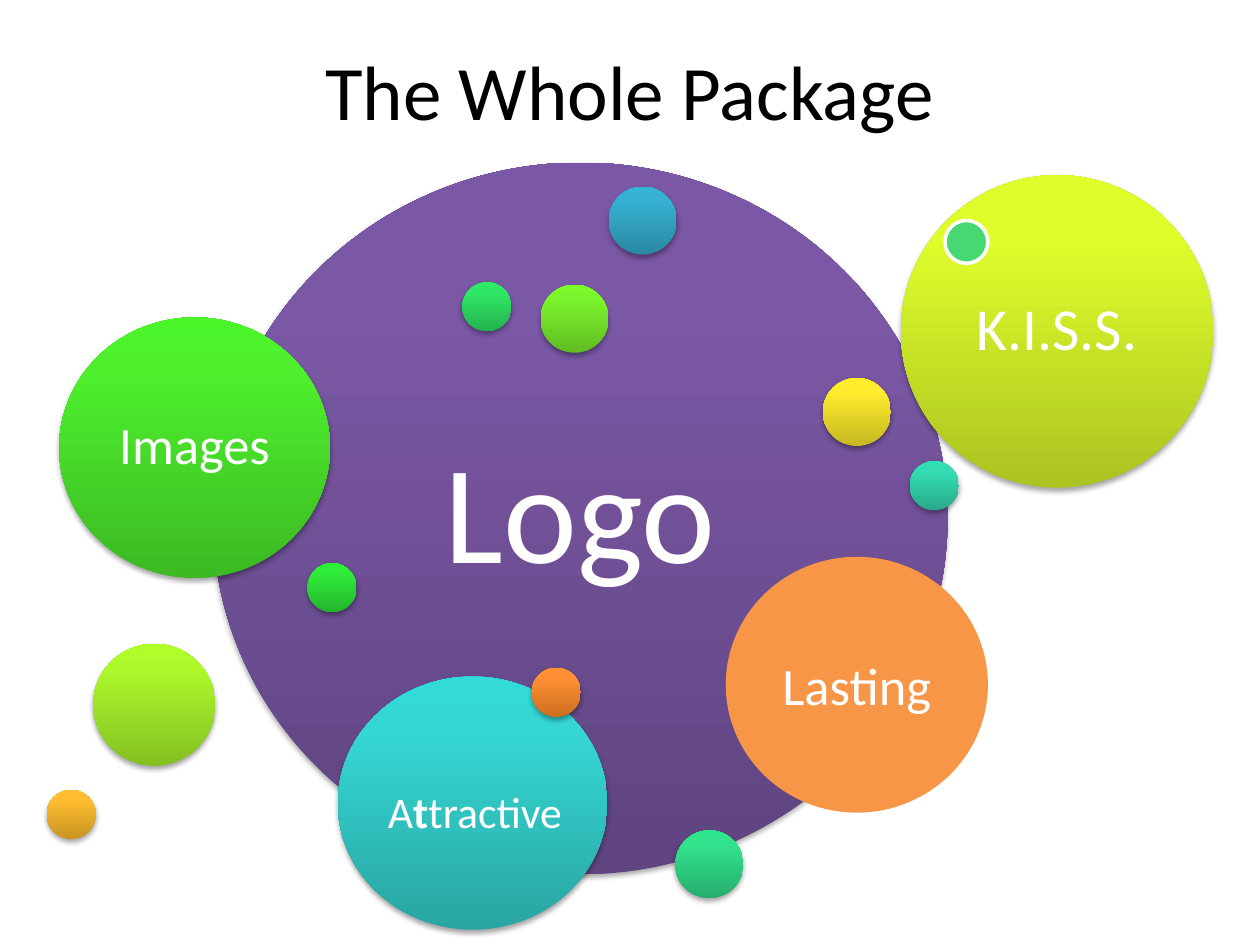
from lxml import etree
from pptx import Presentation
from pptx import util as u
from pptx.dml.color import RGBColor
from pptx.enum import shapes, text
from pptx.oxml import parse_xml
from pptx.oxml.ns import nsdecls, qn

FONT = "Calibri"
WHITE = "FFFFFF"
SMALL, MEDIUM, LARGE = 28.1, 38.9, 69.8
ELLIPSE_INSET = 0.1464

# left, top, width, height, (dark, middle, light), label, label size
BUBBLES = [
    (121.7, 92.9, 419.8, 406.8, ("5F4480", "7B58A6", "7C57A8"), "Logo", 80),
    (347.8, 106.6, MEDIUM, MEDIUM, ("2A88A2", "37B1D2", "34B4D6"), "", 0),
    (193, 386.6, 154.1, 144.7, ("29A6A3", "35D7D4", "32DBD8"), "", 0),
    (519.8, 263.5, SMALL, SMALL, ("27AA89", "33DCB2", "30E1B5"), "", 0),
    (385.9, 474.5, MEDIUM, MEDIUM, ("26AE6D", "32E28D", "2EE68E"), "", 0),
    (264.2, 161.3, SMALL, SMALL, ("25B24E", "30E765", "2DEB64"), "", 0),
    (175.7, 321.8, SMALL, SMALL, ("24B52D", "2FEB3A", "2BF038"), "", 0),
    (33.8, 181.4, 154.8, 149, ("3CB923", "4EF02E", "4CF52A"), "Images", 30),
    (308.9, 162.7, MEDIUM, MEDIUM, ("60BC22", "7CF52D", "7CFA29"), "", 0),
    (53.3, 367.9, LARGE, LARGE, ("85C022", "ADF92C", "AFFE28"), "", 0),
    (514.8, 100.1, 178.6, 178.6, ("ACC321", "DFFD2B", "E1FF2B"), "K.I.S.S.", 34),
    (470.2, 216, MEDIUM, MEDIUM, ("C6B821", "FFEC2D", "FFED2E"), "", 0),
    (26.6, 451.4, SMALL, SMALL, ("C99421", "FFBD31", "FFBE32"), "", 0),
    (303.8, 381.6, SMALL, SMALL, ("CC6E20", "FF9034", "FF9136"), "", 0),
]


def color(value):
    """Turn a hex string into a colour."""
    return RGBColor.from_string(value)


def style_paragraph(paragraph, size, ink=WHITE):
    """Centre a paragraph and set its font."""
    paragraph.alignment = text.PP_ALIGN.CENTER
    paragraph.font.name = FONT
    paragraph.font.size = u.Pt(size)
    paragraph.font.color.rgb = color(ink)


def add_circle(page, left, top, width, height):
    """Add an ellipse without line or shadow."""
    circle = page.shapes.add_shape(
        shapes.MSO_SHAPE.OVAL, u.Pt(left), u.Pt(top), u.Pt(width), u.Pt(height))
    circle.shadow.inherit = False
    circle.line.fill.background()
    return circle


def add_flat_circle(page, left, top, width, height, fill):
    """Add an ellipse with one solid colour."""
    circle = add_circle(page, left, top, width, height)
    circle.fill.solid()
    circle.fill.fore_color.rgb = color(fill)
    return circle


def shade(circle, tones):
    """Give a circle a vertical gradient and a soft shadow below."""
    circle.fill.gradient()
    circle.fill.gradient_angle = 90
    properties = circle.element.spPr
    stops = properties.find(qn("a:gradFill")).find(qn("a:gsLst"))
    for stop in list(stops):
        stops.remove(stop)
    for position, tone in zip((0, 80, 100), tones):
        stop = etree.SubElement(stops, qn("a:gs"), pos=str(position * 1000))
        etree.SubElement(stop, qn("a:srgbClr"), val=tone)
    properties.find(qn("a:effectLst")).append(parse_xml(
        f'<a:outerShdw {nsdecls("a")} blurRad="{u.Pt(3.1)}" dist="{u.Pt(1.8)}" '
        'dir="5400000" rotWithShape="0"><a:srgbClr val="000000">'
        '<a:alpha val="35000"/></a:srgbClr></a:outerShdw>'))


def add_text_box(page, left, top, width, height):
    """Add a wrapping text box and return its frame."""
    box = page.shapes.add_textbox(u.Pt(left), u.Pt(top), u.Pt(width), u.Pt(height))
    box.text_frame.word_wrap = True
    return box.text_frame


def add_label(page, left, top, width, height, wording, size):
    """Write a label in the rectangle inscribed in an ellipse."""
    share = 1 - 2 * ELLIPSE_INSET
    frame = add_text_box(page, left + width * ELLIPSE_INSET,
                         top + height * ELLIPSE_INSET, width * share, height * share)
    frame.vertical_anchor = text.MSO_ANCHOR.MIDDLE
    margin = u.Pt(0.3 * size)
    frame.margin_left = frame.margin_right = margin
    frame.margin_top = frame.margin_bottom = margin
    paragraph = frame.paragraphs[0]
    paragraph.text = wording
    paragraph.line_spacing = 0.9
    style_paragraph(paragraph, size)


def add_bubble(page, left, top, width, height, tones, wording, size):
    """Add a shaded circle with an optional label."""
    shade(add_circle(page, left, top, width, height), tones)
    if wording:
        add_label(page, left, top, width, height, wording, size)


def add_title(page, wording):
    """Place and fill the title placeholder."""
    title = page.shapes.title
    title.left, title.top = u.Pt(175.7), u.Pt(18)
    title.width, title.height = u.Pt(368.6), u.Pt(66.2)
    title.text_frame.vertical_anchor = text.MSO_ANCHOR.MIDDLE
    title.text_frame.text = wording
    style_paragraph(title.text_frame.paragraphs[0], 44, "000000")


def add_lasting(page):
    """Add the flat orange circle with its text."""
    circle = add_flat_circle(page, 414.7, 318.2, 149.8, 146.2, "F79646")
    circle.text_frame.vertical_anchor = text.MSO_ANCHOR.MIDDLE
    paragraph = circle.text_frame.paragraphs[0]
    paragraph.text = "Lasting"
    style_paragraph(paragraph, 30)


def add_attractive(page):
    """Add the caption with one bold letter."""
    frame = add_text_box(page, 210.2, 445, 122.4, 37.4)
    frame.auto_size = text.MSO_AUTO_SIZE.SHAPE_TO_FIT_TEXT
    paragraph = frame.paragraphs[0]
    style_paragraph(paragraph, 25)
    for wording, bold in (("A", False), ("t", True), ("tractive", False)):
        span = paragraph.add_run()
        span.text = wording
        span.font.bold = bold


def main():
    """Build the slide and save the deck."""
    deck = Presentation()
    deck.slide_width, deck.slide_height = u.Pt(720), u.Pt(540)
    page = deck.slides.add_slide(deck.slide_layouts[5])
    add_title(page, "The Whole Package")
    for bubble in BUBBLES:
        add_bubble(page, *bubble)
    add_lasting(page)
    add_attractive(page)
    dot = add_flat_circle(page, 540, 126, 24.5, 24.5, "47D872")
    dot.line.color.rgb = color(WHITE)
    dot.line.width = u.Pt(2)
    deck.save("out.pptx")


if __name__ == "__main__":
    main()
